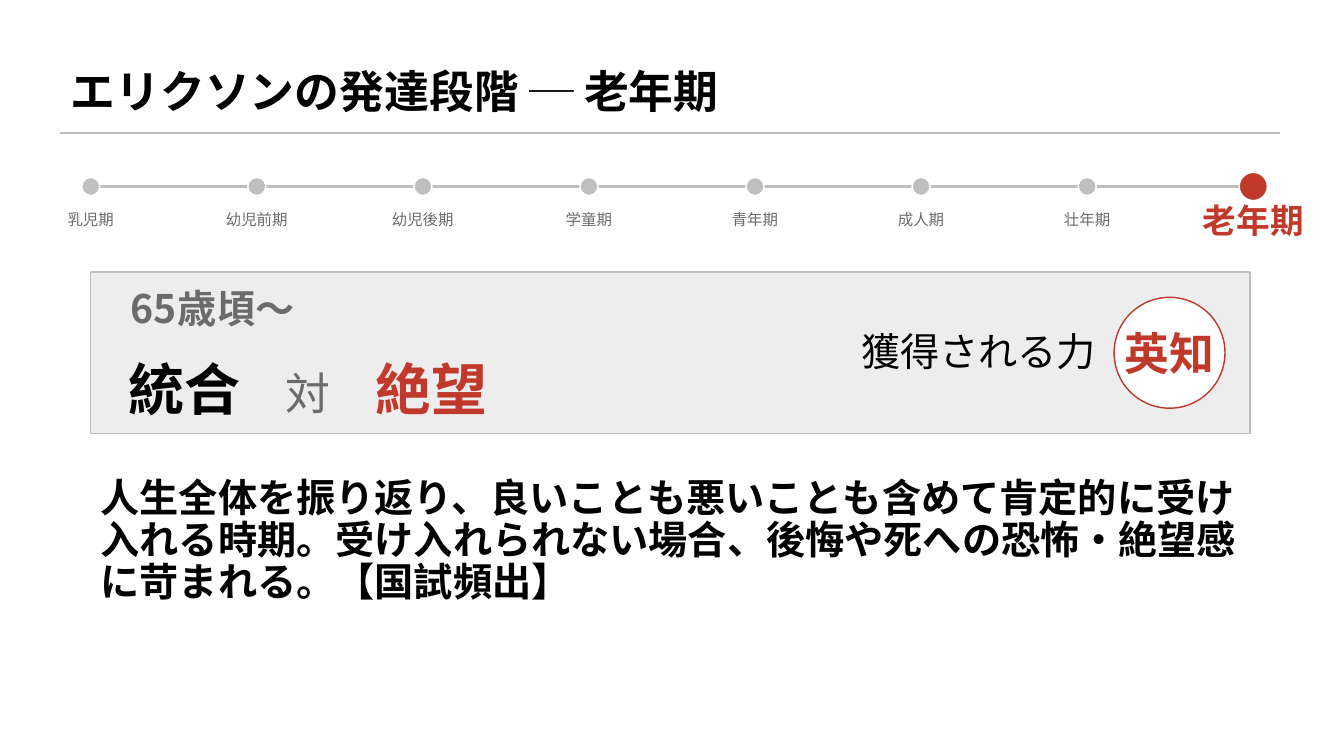
from lxml import etree
from pptx import Presentation
from pptx.dml.color import RGBColor
from pptx.enum.shapes import MSO_CONNECTOR, MSO_SHAPE
from pptx.enum.text import MSO_ANCHOR, PP_ALIGN
from pptx.oxml.ns import qn
from pptx.util import Inches, Pt

FONT = "Noto Sans CJK JP"
BLACK = RGBColor(0x00, 0x00, 0x00)
WHITE = RGBColor(0xFF, 0xFF, 0xFF)
RED = RGBColor(0xC0, 0x39, 0x2B)
GRAY = RGBColor(0x6B, 0x6B, 0x6B)
RULE = RGBColor(0xBF, 0xBF, 0xBF)
PANEL = RGBColor(0xED, 0xED, 0xED)
LEFT, CENTER = PP_ALIGN.LEFT, PP_ALIGN.CENTER
TOP, MIDDLE = MSO_ANCHOR.TOP, MSO_ANCHOR.MIDDLE
OVAL, RECT = MSO_SHAPE.OVAL, MSO_SHAPE.RECTANGLE
STRAIGHT = MSO_CONNECTOR.STRAIGHT

STAGES = ["乳児期", "幼児前期", "幼児後期", "学童期", "青年期", "成人期", "壮年期", "老年期"]
LINE_START, LINE_END, LINE_Y = 0.9, 12.43, 1.85

prs = Presentation()
prs.slide_width, prs.slide_height = Inches(13.33), Inches(7.5)
s = prs.slides.add_slide(prs.slide_layouts[5])


def write(sp, text, size=28, color=BLACK, bold=False, align=LEFT, anchor=MIDDLE, wrap=True):
    """Append a formatted run to the shape's first paragraph and return the paragraph."""
    tf = sp.text_frame
    tf.word_wrap = wrap
    tf.vertical_anchor = anchor
    p = tf.paragraphs[0]
    p.alignment = align
    r = p.add_run()
    r.text = text
    r.font.size = Pt(size)
    r.font.bold = bold
    r.font.color.rgb = color
    r.font.name = FONT
    etree.SubElement(r.font._element, qn("a:ea"), typeface=FONT)
    return p


def add_shape(kind, x, y, w, h, fill, line):
    sp = s.shapes.add_shape(kind, Inches(x), Inches(y), Inches(w), Inches(h))
    sp.shadow.inherit = False
    sp.fill.solid()
    sp.fill.fore_color.rgb = fill
    sp.line.color.rgb = line
    sp.line.width = Pt(1)
    return sp


# Title
title = s.shapes.title
title.left, title.top = Inches(0.6), Inches(0.45)
title.width, title.height = Inches(12.1), Inches(0.9)
write(title, "エリクソンの発達段階 ─ 老年期", size=32, bold=True)

# Title rule and timeline
for x1, x2, y, width in [(0.6, 12.7, 1.32, 1), (LINE_START, LINE_END, LINE_Y, 2)]:
    line = s.shapes.add_connector(STRAIGHT, Inches(x1), Inches(y), Inches(x2), Inches(y))
    line.line.color.rgb = RULE
    line.line.width = Pt(width)
    etree.SubElement(line._element.spPr, qn("a:effectLst"))

# Stages, the last one highlighted
step = (LINE_END - LINE_START) / (len(STAGES) - 1)
for i, stage in enumerate(STAGES):
    current = i == len(STAGES) - 1
    x = LINE_START + i * step
    d = 0.28 if current else 0.18
    add_shape(OVAL, x - d / 2, LINE_Y - d / 2, d, d, RED if current else RULE, WHITE)
    label = s.shapes.add_textbox(Inches(x - 0.75), Inches(2.03), Inches(1.5), Inches(0.3))
    write(label, stage, size=24 if current else 11, color=RED if current else GRAY,
          bold=current, align=CENTER)

# Crisis panel
add_shape(RECT, 0.9, 2.7, 11.5, 1.6, PANEL, RULE)
age = s.shapes.add_textbox(Inches(1.2), Inches(2.85), Inches(3), Inches(0.4))
write(age, "65歳頃〜", color=GRAY, bold=True)
crisis = s.shapes.add_textbox(Inches(1.18), Inches(3.4), Inches(11), Inches(0.9))
write(crisis, "統合", size=40, bold=True)
write(crisis, " 対 ".replace(" ", "　"), size=32, color=GRAY)
write(crisis, "絶望", size=40, color=RED, bold=True)

# Strength gained
virtue = add_shape(OVAL, 11.05, 2.95, 1.1, 1.1, WHITE, RED)
write(virtue, "英知", size=32, color=RED, bold=True, align=CENTER, wrap=False)
gained = s.shapes.add_textbox(Inches(8.24), Inches(3.33), Inches(2.93), Inches(0.3))
write(gained, "獲得される力", align=CENTER)

# Description
body = s.shapes.add_textbox(Inches(0.9), Inches(4.7), Inches(11.5), Inches(2.2))
p = write(body, "人生全体を振り返り、良いことも悪いことも含めて肯定的に受け入れる時期。"
          "受け入れられない場合、後悔や死への恐怖・絶望感に苛まれる。【国試頻出】",
          bold=True, anchor=TOP)
p.line_spacing = Pt(30)

prs.save("out.pptx")
